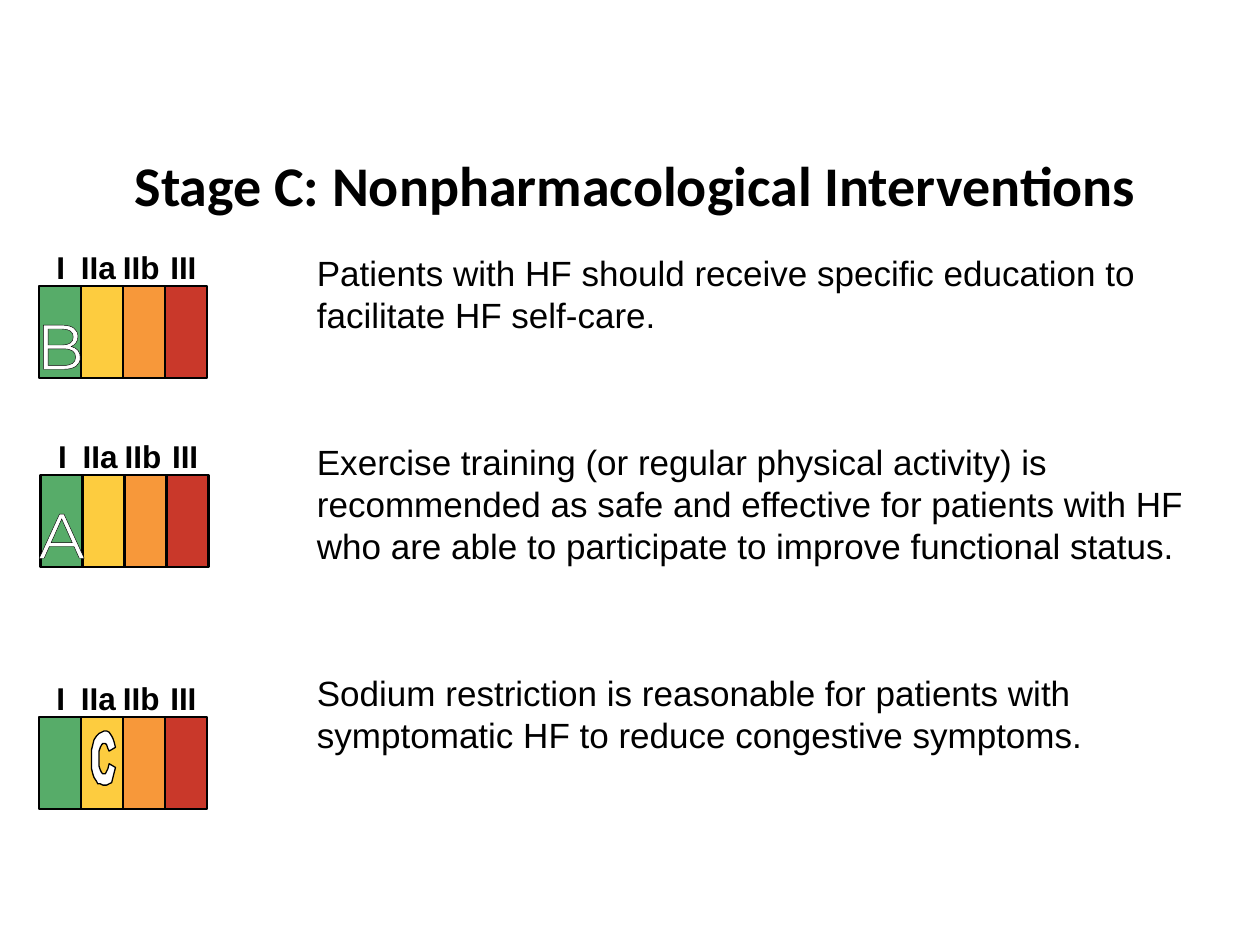
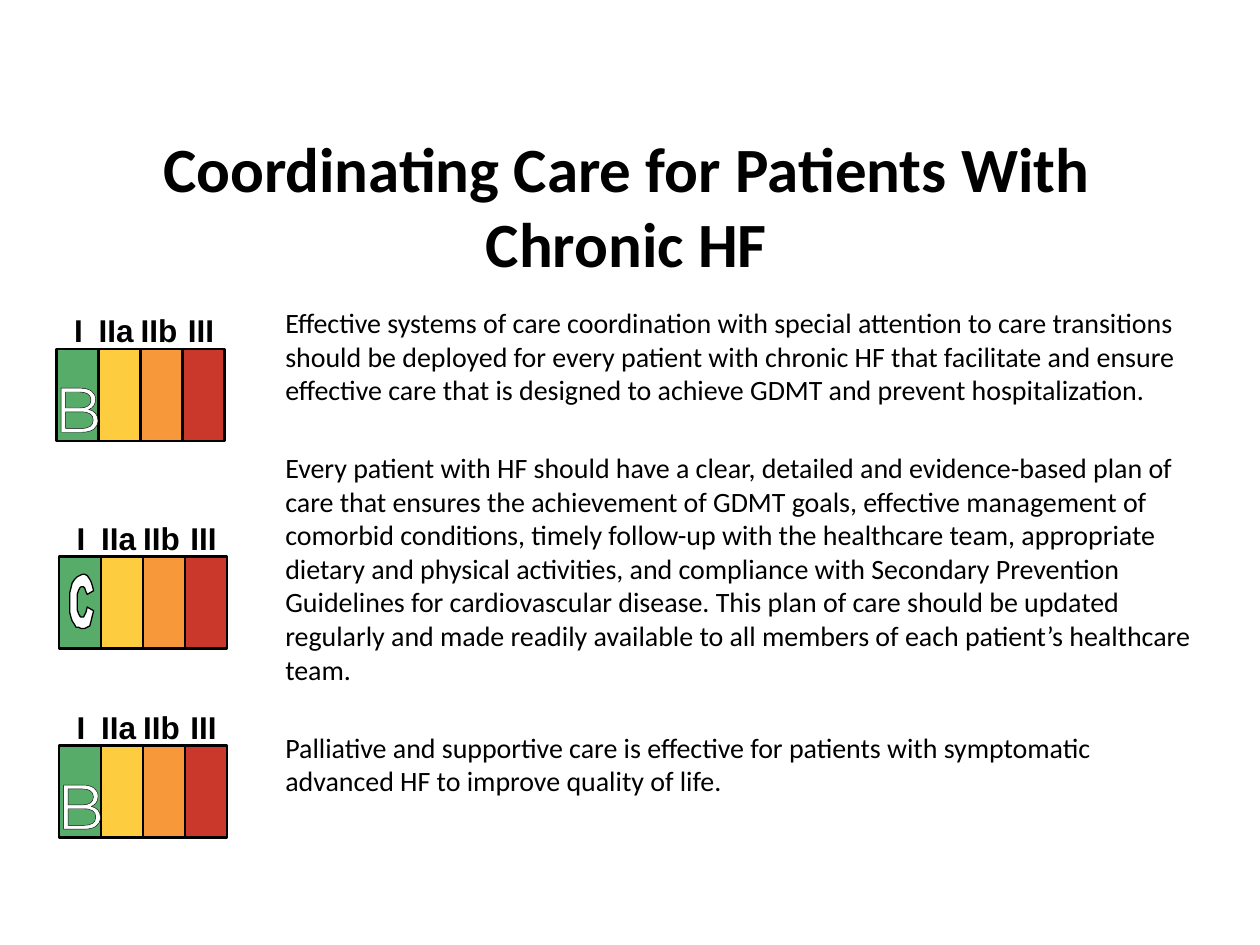
from lxml import etree
from pptx import Presentation
from pptx.dml.color import RGBColor
from pptx.enum.shapes import MSO_SHAPE
from pptx.enum.text import MSO_ANCHOR, PP_ALIGN
from pptx.oxml.ns import qn
from pptx.util import Pt

RECT = MSO_SHAPE.RECTANGLE
LEFT, CENTER = PP_ALIGN.LEFT, PP_ALIGN.CENTER
TOP, MIDDLE = MSO_ANCHOR.TOP, MSO_ANCHOR.MIDDLE

COLORS = {"black": "000000", "white": "FFFFFF", "green": "57AC69",
          "yellow": "FDCC3F", "orange": "F7983A", "red": "C9382A"}
CLASSES = [("I", "green", 10, 5), ("IIa", "yellow", 24, 20),
           ("IIb", "orange", 48, 22), ("III", "red", 75, 15)]
BAND_W, BAND_H = 24, 52.6
LETTER_W, LETTER_H = 36, 40
LETTER_C = [
    (14, 26), (19, 29), (18, 33), (17, 37), (16, 41), (14, 42), (12, 43), (9, 43),
    (7, 42), (5, 42), (4, 40), (2, 37), (1, 34), (0, 30), (0, 25), (0, 19),
    (0, 15), (1, 11), (2, 7), (4, 4), (6, 2), (8, 1), (10, 0), (12, 0),
    (14, 1), (16, 4), (17, 6), (18, 9), (19, 13), (14, 16), (13, 14), (12, 11),
    (11, 10), (9, 10), (8, 11), (7, 13), (6, 16), (6, 20), (6, 25), (6, 28),
    (7, 31), (8, 33), (9, 34), (11, 34), (12, 32), (13, 30)]


def rgb(name):
    return RGBColor.from_string(COLORS[name])


class Deck:
    def __init__(self):
        self.prs = Presentation()
        self.prs.slide_width, self.prs.slide_height = Pt(720), Pt(540)
        self.s = None

    def new_slide(self):
        self.s = self.prs.slides.add_slide(self.prs.slide_layouts[6])

    def text(self, shapes, box, paragraphs, size, font, color="black", bold=False,
             align=LEFT, anchor=TOP, wrap=True, inset=True, pitch=None, gap=0):
        sp = shapes.add_textbox(*[Pt(v) for v in box])
        tf = sp.text_frame
        tf.word_wrap, tf.vertical_anchor = wrap, anchor
        if not inset:
            tf.margin_left = tf.margin_right = tf.margin_top = tf.margin_bottom = 0
        for i, content in enumerate(paragraphs):
            p = tf.add_paragraph() if i else tf.paragraphs[0]
            p.alignment = align
            if pitch:
                p.line_spacing = Pt(pitch)
            if i:
                p.space_before = Pt(gap)
            r = p.add_run()
            r.text = content
            r.font.size, r.font.name, r.font.bold = Pt(size), font, bold
            r.font.color.rgb = rgb(color)
        return sp

    def title(self, box, content, size):
        self.text(self.s.shapes, box, [content], size, "Calibri", bold=True,
                  align=CENTER, anchor=MIDDLE)

    def body(self, box, paragraphs, size, font, pitch, gap):
        self.text(self.s.shapes, box, paragraphs, size, font, pitch=pitch, gap=gap)

    def paint(self, sp, fill, width):
        sp.shadow.inherit = False
        sp.fill.solid()
        sp.fill.fore_color.rgb = rgb(fill)
        sp.line.color.rgb = rgb("black")
        sp.line.width = Pt(width)

    def outlined_letter(self, shapes, x, y, letter):
        box = (x + (BAND_W - LETTER_W) / 2, y + 11.6, LETTER_W, LETTER_H)
        sp = self.text(shapes, box, [letter], 36, "Montserrat", color="white",
                       align=CENTER, inset=False)
        r_pr = sp.text_frame.paragraphs[0].runs[0].font._element
        ln = etree.Element(qn("a:ln"), w=str(Pt(0.75)))
        fill = etree.SubElement(ln, qn("a:solidFill"))
        etree.SubElement(fill, qn("a:srgbClr"), val=COLORS["black"])
        r_pr.insert(0, ln)

    def drawn_c(self, shapes, x, y):
        fb = shapes.build_freeform(*LETTER_C[0], scale=Pt(0.72))
        fb.add_line_segments(LETTER_C[1:], close=True)
        self.paint(fb.convert_to_shape(Pt(x), Pt(y)), "white", 0.75)

    def grade(self, x, y, level, column=0, drop=8):
        shapes = self.s.shapes.add_group_shape().shapes
        for i, (label, color, dx, width) in enumerate(CLASSES):
            band = shapes.add_shape(RECT, Pt(x + i * BAND_W), Pt(y), Pt(BAND_W), Pt(BAND_H))
            self.paint(band, color, 1.5)
            self.text(shapes, (x + dx, y - 21.8, width, 21.8), [label], 18, "Arial",
                      bold=True, wrap=False, inset=False)
        left = x + column * BAND_W
        if level == "C":
            self.drawn_c(shapes, left + 6, y + drop)
        else:
            self.outlined_letter(shapes, left, y, level)


def main():
    deck = Deck()

    deck.new_slide()
    deck.title((36, 60, 654.5, 90), "Stage C: Nonpharmacological Interventions", 32)
    deck.body((174, 140, 516.5, 348), [
        "Patients with HF should receive specific education to facilitate HF self-care.",
        "Exercise training (or regular physical activity) is recommended as safe and "
        "effective for patients with HF who are able to participate to improve "
        "functional status.",
        "Sodium restriction is reasonable for patients with symptomatic HF to reduce "
        "congestive symptoms."], 20, "Arial", pitch=24, gap=60)
    deck.grade(22.3, 163.4, "B")
    deck.grade(23.3, 271.4, "A")
    deck.grade(22.3, 409.7, "C", column=1)

    deck.new_slide()
    deck.title((34, 72, 648, 90), "Coordinating Care for Patients With Chronic HF", 36)
    deck.body((156, 171, 540, 294.5), [
        "Effective systems of care coordination with special attention to care "
        "transitions should be deployed for every patient with chronic HF that "
        "facilitate and ensure effective care that is designed to achieve GDMT and "
        "prevent hospitalization.",
        "Every patient with HF should have a clear, detailed and evidence-based plan of "
        "care that ensures the achievement of GDMT goals, effective management of "
        "comorbid conditions, timely follow-up with the healthcare team, appropriate "
        "dietary and physical activities, and compliance with Secondary Prevention "
        "Guidelines for cardiovascular disease. This plan of care should be updated "
        "regularly and made readily available to all members of each patient’s "
        "healthcare team.",
        "Palliative and supportive care is effective for patients with symptomatic "
        "advanced HF to improve quality of life."], 16, "Calibri", pitch=19.2, gap=25.4)
    deck.grade(32.4, 199.4, "B")
    deck.grade(33.8, 318.2, "C", drop=10)
    deck.grade(33.8, 426.2, "B")

    deck.prs.save("out.pptx")


if __name__ == "__main__":
    main()
